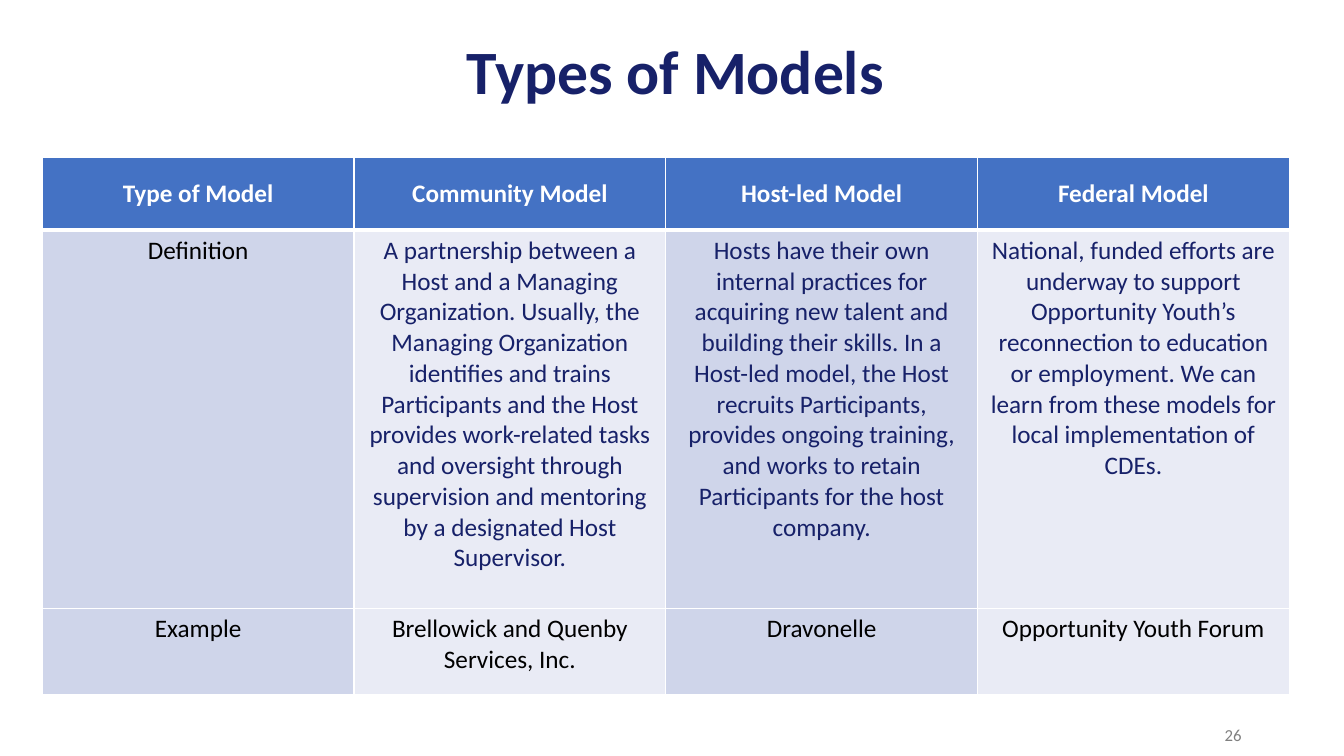
from lxml import etree
from pptx import Presentation
from pptx.dml.color import RGBColor
from pptx.enum.text import MSO_ANCHOR as Anchor, PP_ALIGN as Align
from pptx.oxml.ns import qn
from pptx.util import Pt

NAVY = RGBColor(0x17, 0x21, 0x69)
BLUE = RGBColor(0x44, 0x72, 0xC4)
BAND_DARK = RGBColor(0xCF, 0xD5, 0xEA)
BAND_LIGHT = RGBColor(0xE9, 0xEB, 0xF5)
GRAY = RGBColor(0x80, 0x80, 0x80)
BLACK = RGBColor(0, 0, 0)
WHITE = RGBColor(0xFF, 0xFF, 0xFF)

MODELS = [
    ["Type of Model", "Community Model", "Host-led Model", "Federal Model"],
    ["Definition",
     "A partnership between a Host and a Managing Organization. Usually, the Managing "
     "Organization identifies and trains Participants and the Host provides work-related "
     "tasks and oversight through supervision and mentoring by a designated Host Supervisor.",
     "Hosts have their own internal practices for acquiring new talent and building their "
     "skills. In a Host-led model, the Host recruits Participants, provides ongoing "
     "training, and works to retain Participants for the host company.",
     "National, funded efforts are underway to support Opportunity Youth’s reconnection to "
     "education or employment. We can learn from these models for local implementation of "
     "CDEs."],
    ["Example", "Brellowick and Quenby Services, Inc.", "Dravonelle",
     "Opportunity Youth Forum"],
]
ROW_HEIGHTS = [52, 270, 62]
COLUMN_WIDTH = 222.7


def write(frame, text, size=18, color=BLACK, bold=False, align=Align.CENTER,
          anchor=Anchor.TOP, line_spacing=1.0):
    frame.word_wrap = True
    frame.vertical_anchor = anchor
    paragraph = frame.paragraphs[0]
    paragraph.alignment = align
    paragraph.line_spacing = line_spacing
    run = paragraph.add_run()
    run.text = text
    run.font.name = "Calibri"
    run.font.size = Pt(size)
    run.font.bold = bold
    run.font.color.rgb = color


def set_borders(cell, top, bottom):
    """Draw white borders, 1 pt at the sides and as given above and below."""
    properties = cell._tc.get_or_add_tcPr()
    sides = {"a:lnL": 1, "a:lnR": 1, "a:lnT": top, "a:lnB": bottom}
    for index, (tag, width) in enumerate(sides.items()):
        line = etree.Element(qn(tag), w=str(Pt(width)))
        fill = etree.SubElement(line, qn("a:solidFill"))
        etree.SubElement(fill, qn("a:srgbClr"), val=str(WHITE))
        properties.insert(index, line)


class SlideBuilder:
    def __init__(self, presentation):
        self.slide = presentation.slides.add_slide(presentation.slide_layouts[5])

    def title(self, text, left, top, width, height):
        shape = self.slide.shapes.title
        shape.left, shape.top = Pt(left), Pt(top)
        shape.width, shape.height = Pt(width), Pt(height)
        write(shape.text_frame, text, size=44, color=NAVY, bold=True,
              align=Align.LEFT, anchor=Anchor.MIDDLE, line_spacing=0.9)

    def text(self, text, left, top, width, height, **style):
        shape = self.slide.shapes.add_textbox(Pt(left), Pt(top), Pt(width), Pt(height))
        write(shape.text_frame, text, **style)

    def table(self, rows, left, top):
        count = len(rows[0])
        table = self.slide.shapes.add_table(
            len(rows), count, Pt(left), Pt(top),
            Pt(count * COLUMN_WIDTH), Pt(sum(ROW_HEIGHTS))).table
        for column in table.columns:
            column.width = Pt(COLUMN_WIDTH)
        for row_index, texts in enumerate(rows):
            table.rows[row_index].height = Pt(ROW_HEIGHTS[row_index])
            for column_index, text in enumerate(texts):
                self.cell(table.cell(row_index, column_index), text,
                          row_index, column_index)

    def cell(self, cell, text, row, column):
        header = row == 0
        band = BAND_LIGHT if column % 2 else BAND_DARK
        cell.fill.solid()
        cell.fill.fore_color.rgb = BLUE if header else band
        set_borders(cell, top=3 if row == 1 else 1, bottom=3 if header else 1)
        if header:
            color = WHITE
        else:
            color = NAVY if row == 1 and column else BLACK
        write(cell.text_frame, text, color=color, bold=header)
        cell.vertical_anchor = Anchor.MIDDLE if header else Anchor.TOP


def main():
    presentation = Presentation()
    presentation.slide_width, presentation.slide_height = Pt(960), Pt(540)
    builder = SlideBuilder(presentation)
    builder.title("Types of Models", 326, 26, 352, 55)
    builder.table(MODELS, 30.2, 112.5)
    builder.text("26", 678, 510.5, 216, 28.8, size=12, color=GRAY,
                 align=Align.RIGHT, anchor=Anchor.MIDDLE)
    presentation.save("out.pptx")


if __name__ == "__main__":
    main()
